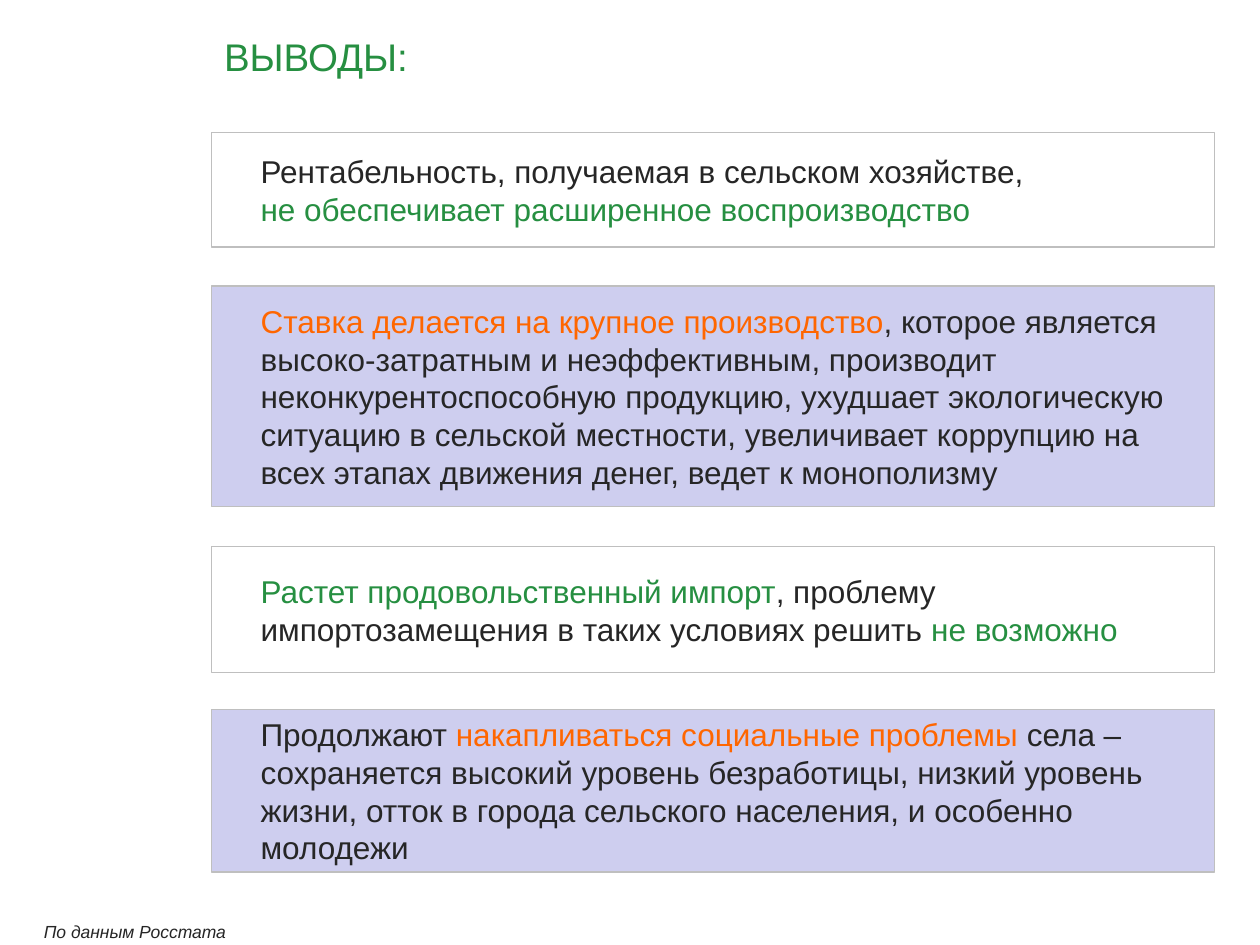
from dataclasses import dataclass
from typing import Any

from pptx import Presentation
from pptx import util as u
from pptx.dml.color import RGBColor
from pptx.enum import shapes, text

EMU_PER_PX = 9144
GREEN = RGBColor(0x26, 0x8F, 0x41)
ORANGE = RGBColor(0xFF, 0x66, 0x00)
DARK = RGBColor(0x26, 0x26, 0x26)
GREY = RGBColor(0xBF, 0xBF, 0xBF)
WHITE = RGBColor(0xFF, 0xFF, 0xFF)
LAVENDER = RGBColor(0xCE, 0xCE, 0xEF)

COLUMN_LEFT, COLUMN_WIDTH = 168, 796
TEXT_INDENT = 29


@dataclass(frozen=True)
class Phrase:
    wording: str
    color: RGBColor = DARK


@dataclass(frozen=True)
class Conclusion:
    top: int
    height: int
    fill: RGBColor
    phrases: tuple[Phrase, ...]
    space_after: int = 0


CONCLUSIONS = (
    Conclusion(105, 91, WHITE, (
        Phrase("Рентабельность, получаемая в сельском хозяйстве, \n"),
        Phrase("не обеспечивает расширенное воспроизводство", GREEN),
    )),
    Conclusion(227, 175, LAVENDER, (
        Phrase("Ставка делается на крупное производство", ORANGE),
        Phrase(", которое является \nвысоко-затратным и неэффективным, производит "
               "неконкурентоспособную продукцию, ухудшает экологическую ситуацию "
               "в сельской местности, увеличивает коррупцию на всех этапах "
               "движения денег, ведет к монополизму"),
    ), 6),
    Conclusion(434, 100, WHITE, (
        Phrase("Растет продовольственный импорт", GREEN),
        Phrase(", проблему импортозамещения в таких условиях решить "),
        Phrase("не возможно", GREEN),
    ), 6),
    Conclusion(563, 129, LAVENDER, (
        Phrase("Продолжают "),
        Phrase("накапливаться социальные проблемы ", ORANGE),
        Phrase("села – сохраняется высокий уровень безработицы, низкий уровень "
               "жизни, отток в города сельского населения, и особенно молодежи"),
    )),
)


def px(length: int) -> u.Emu:
    return u.Emu(length * EMU_PER_PX)


def apply_format(target: Any, values: dict[str, Any]) -> None:
    for attribute, value in values.items():
        setattr(target, attribute, value)


def write_phrases(paragraph: Any, phrases: tuple[Phrase, ...], size: int,
                  italic: bool = False) -> None:
    font_format = {"name": "Arial", "size": u.Pt(size), "italic": italic}
    for phrase in phrases:
        for index, line in enumerate(phrase.wording.split("\n")):
            if index:
                paragraph.add_line_break()
            if line:
                run = paragraph.add_run()
                run.text = line
                apply_format(run.font, font_format)
                run.font.color.rgb = phrase.color


def draw_label(slide: Any, box: tuple[int, int, int, int], phrase: Phrase, size: int,
               frame_format: dict[str, Any], paragraph_format: dict[str, Any],
               italic: bool = False) -> None:
    frame = slide.shapes.add_textbox(*map(px, box)).text_frame
    apply_format(frame, {"word_wrap": True, **frame_format})
    paragraph = frame.paragraphs[0]
    apply_format(paragraph, paragraph_format)
    write_phrases(paragraph, (phrase,), size, italic)


def draw_conclusion(slide: Any, conclusion: Conclusion) -> None:
    panel = slide.shapes.add_shape(
        shapes.MSO_SHAPE.RECTANGLE, px(COLUMN_LEFT), px(conclusion.top),
        px(COLUMN_WIDTH), px(conclusion.height))
    panel.shadow.inherit = False
    panel.fill.solid()
    panel.fill.fore_color.rgb = conclusion.fill
    panel.line.color.rgb = GREY
    panel.line.width = u.Pt(0.75)
    apply_format(panel.text_frame, {
        "word_wrap": True, "vertical_anchor": text.MSO_ANCHOR.MIDDLE})
    paragraph = panel.text_frame.paragraphs[0]
    apply_format(paragraph, {
        "alignment": text.PP_ALIGN.LEFT, "space_after": u.Pt(conclusion.space_after)})
    paragraph_properties = paragraph._p.get_or_add_pPr()
    paragraph_properties.set("marL", str(px(TEXT_INDENT)))
    paragraph_properties.set("indent", "0")
    write_phrases(paragraph, conclusion.phrases, 18)


def main() -> None:
    presentation = Presentation()
    apply_format(presentation, {"slide_width": px(1000), "slide_height": px(750)})
    slide = presentation.slides.add_slide(presentation.slide_layouts[6])

    draw_label(slide, (COLUMN_LEFT, 30, 789, 68), Phrase("ВЫВОДЫ:", GREEN), 22,
               {"vertical_anchor": text.MSO_ANCHOR.TOP}, {"line_spacing": u.Pt(20.1)})
    for conclusion in CONCLUSIONS:
        draw_conclusion(slide, conclusion)
    draw_label(slide, (15, 726, 184, 27), Phrase("По данным Росстата"), 10,
               {"vertical_anchor": text.MSO_ANCHOR.MIDDLE,
                "auto_size": text.MSO_AUTO_SIZE.SHAPE_TO_FIT_TEXT},
               {"alignment": text.PP_ALIGN.CENTER}, italic=True)

    presentation.save("out.pptx")


if __name__ == "__main__":
    main()
